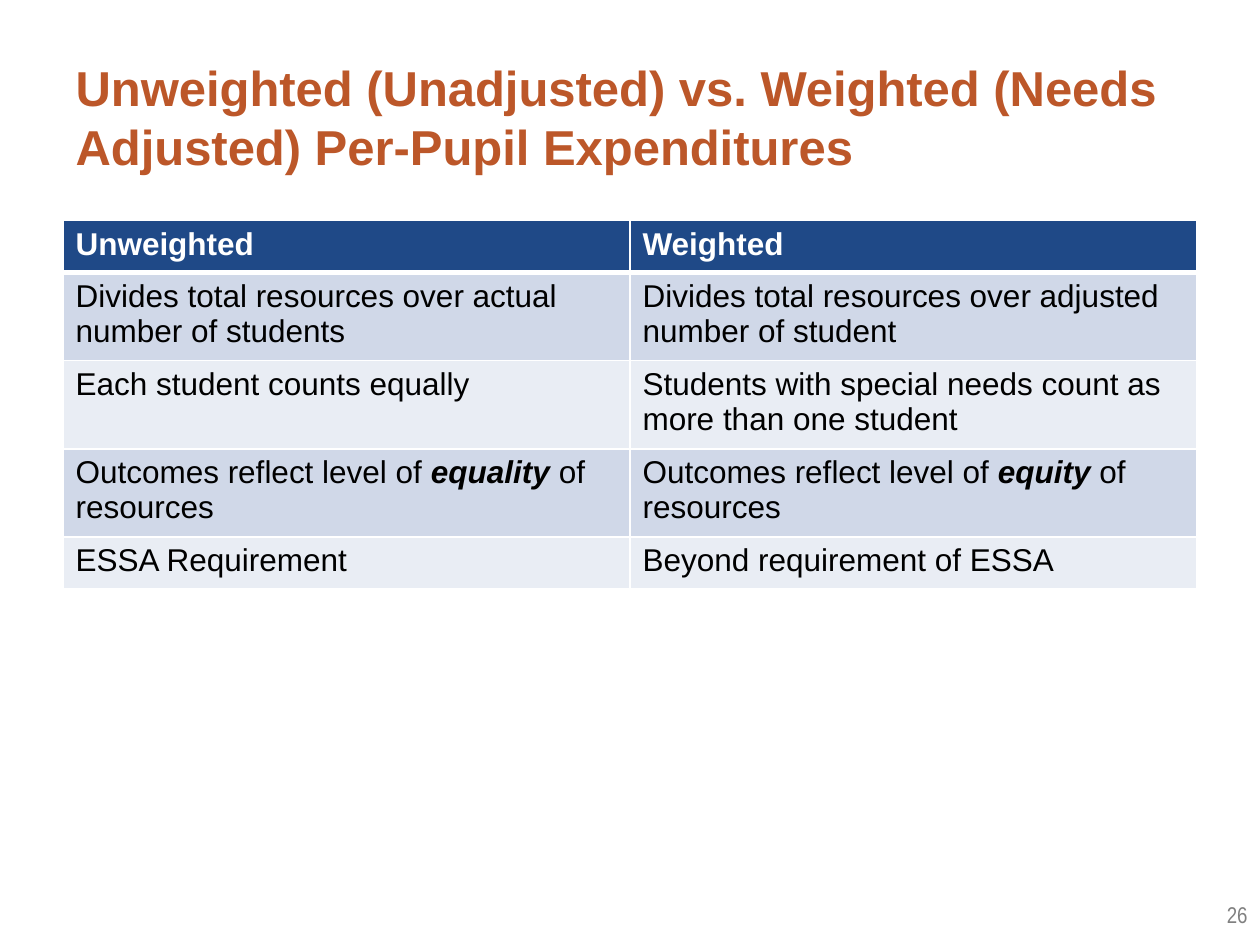
"""Build the slide comparing unweighted and weighted per-pupil expenditures."""
from dataclasses import dataclass

import lxml.etree
import pptx
import pptx.dml.color
import pptx.enum.text
import pptx.oxml.ns
import pptx.util

RGBColor = pptx.dml.color.RGBColor
Cm = pptx.util.Cm
Pt = pptx.util.Pt

ORANGE = RGBColor(0xBC, 0x57, 0x29)
NAVY = RGBColor(0x1F, 0x49, 0x87)
BAND_DARK = RGBColor(0xD0, 0xD8, 0xE8)
BAND_LIGHT = RGBColor(0xE9, 0xED, 0xF4)
WHITE = RGBColor(0xFF, 0xFF, 0xFF)
BLACK = RGBColor(0, 0, 0)
GRAY = RGBColor(0x80, 0x80, 0x80)

TITLE_FORMAT = {"name": "Arial", "size": Pt(28), "bold": True, "color": ORANGE}
HEADER_FORMAT = {"name": "Arial", "size": Pt(18), "bold": True, "color": WHITE}
BODY_FORMAT = {"name": "Arial", "size": Pt(18), "bold": False, "color": BLACK}
EMPHASIS_FORMAT = BODY_FORMAT | {"bold": True, "italic": True}
NUMBER_FORMAT = {"name": "Arial Narrow", "size": Pt(13), "color": GRAY}


@dataclass
class Entry:
    text: str
    emphasis: str = ""
    ending: str = ""


ROWS = [
    (Entry("Unweighted"), Entry("Weighted")),
    (Entry("Divides total resources over actual number of students"),
     Entry("Divides total resources over adjusted number of student")),
    (Entry("Each student counts equally"),
     Entry("Students with special needs count as more than one student")),
    (Entry("Outcomes reflect level of ", "equality", " of resources"),
     Entry("Outcomes reflect level of ", "equity ", "of resources")),
    (Entry("ESSA Requirement"), Entry("Beyond requirement of ESSA")),
]


def add_span(para, text: str, formats: dict) -> None:
    span = para.add_run()
    span.text = text
    for name, value in formats.items():
        if name == "color":
            span.font.color.rgb = value
        else:
            setattr(span.font, name, value)


def set_borders(cell, bottom_width: int) -> None:
    properties = cell._tc.get_or_add_tcPr()
    widths = {"lnL": 1, "lnR": 1, "lnT": 1, "lnB": bottom_width}
    for position, (side, width) in enumerate(widths.items()):
        line = lxml.etree.Element(pptx.oxml.ns.qn(f"a:{side}"), w=str(Pt(width)))
        fill = lxml.etree.SubElement(line, pptx.oxml.ns.qn("a:solidFill"))
        lxml.etree.SubElement(fill, pptx.oxml.ns.qn("a:srgbClr"), val=str(WHITE))
        properties.insert(position, line)


def fill_cell(cell, entry: Entry, formats: dict, color: RGBColor, bottom_width: int) -> None:
    cell.fill.solid()
    cell.fill.fore_color.rgb = color
    set_borders(cell, bottom_width)
    para = cell.text_frame.paragraphs[0]
    add_span(para, entry.text, formats)
    if entry.emphasis:
        add_span(para, entry.emphasis, EMPHASIS_FORMAT)
        add_span(para, entry.ending, formats)


def add_title(slide) -> None:
    title = slide.shapes.title
    title.left, title.top, title.width, title.height = Cm(1.27), Cm(0.76), Cm(22.86), Cm(3.18)
    title.text_frame.vertical_anchor = pptx.enum.text.MSO_ANCHOR.MIDDLE
    para = title.text_frame.paragraphs[0]
    para.alignment = pptx.enum.text.PP_ALIGN.LEFT
    add_span(para, "Unweighted (Unadjusted) vs. Weighted (Needs Adjusted) Per-Pupil Expenditures",
             TITLE_FORMAT)


def add_comparison(slide) -> None:
    frame = slide.shapes.add_table(len(ROWS), 2, Cm(1.27), Cm(4.45), Cm(22.86), Cm(5.2))
    for index, entries in enumerate(ROWS):
        header = index == 0
        color = NAVY if header else BAND_DARK if index % 2 else BAND_LIGHT
        formats = HEADER_FORMAT if header else BODY_FORMAT
        for column, entry in enumerate(entries):
            fill_cell(frame.table.cell(index, column), entry, formats, color, 3 if header else 1)


def add_page_number(slide) -> None:
    box = slide.shapes.add_textbox(Cm(20.62), Cm(18.03), Cm(4.78), Cm(1.02))
    box.text_frame.word_wrap = True
    para = box.text_frame.paragraphs[0]
    para.alignment = pptx.enum.text.PP_ALIGN.RIGHT
    add_span(para, "26", NUMBER_FORMAT)


def main() -> None:
    deck = pptx.Presentation()
    deck.slide_width, deck.slide_height = Cm(25.4), Cm(19.05)
    slide = deck.slides.add_slide(deck.slide_layouts[5])
    add_page_number(slide)
    add_title(slide)
    add_comparison(slide)
    deck.save("out.pptx")


if __name__ == "__main__":
    main()
